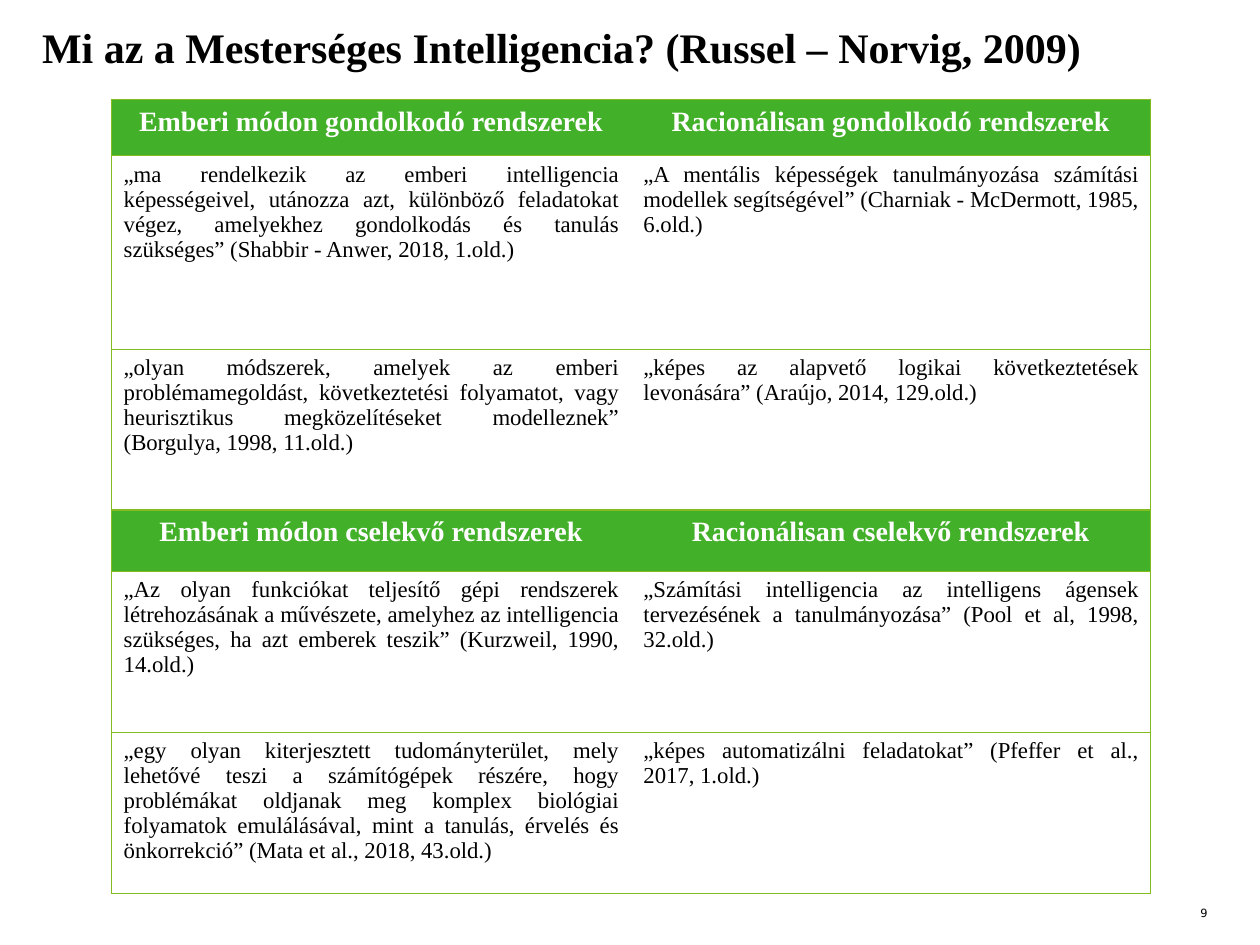
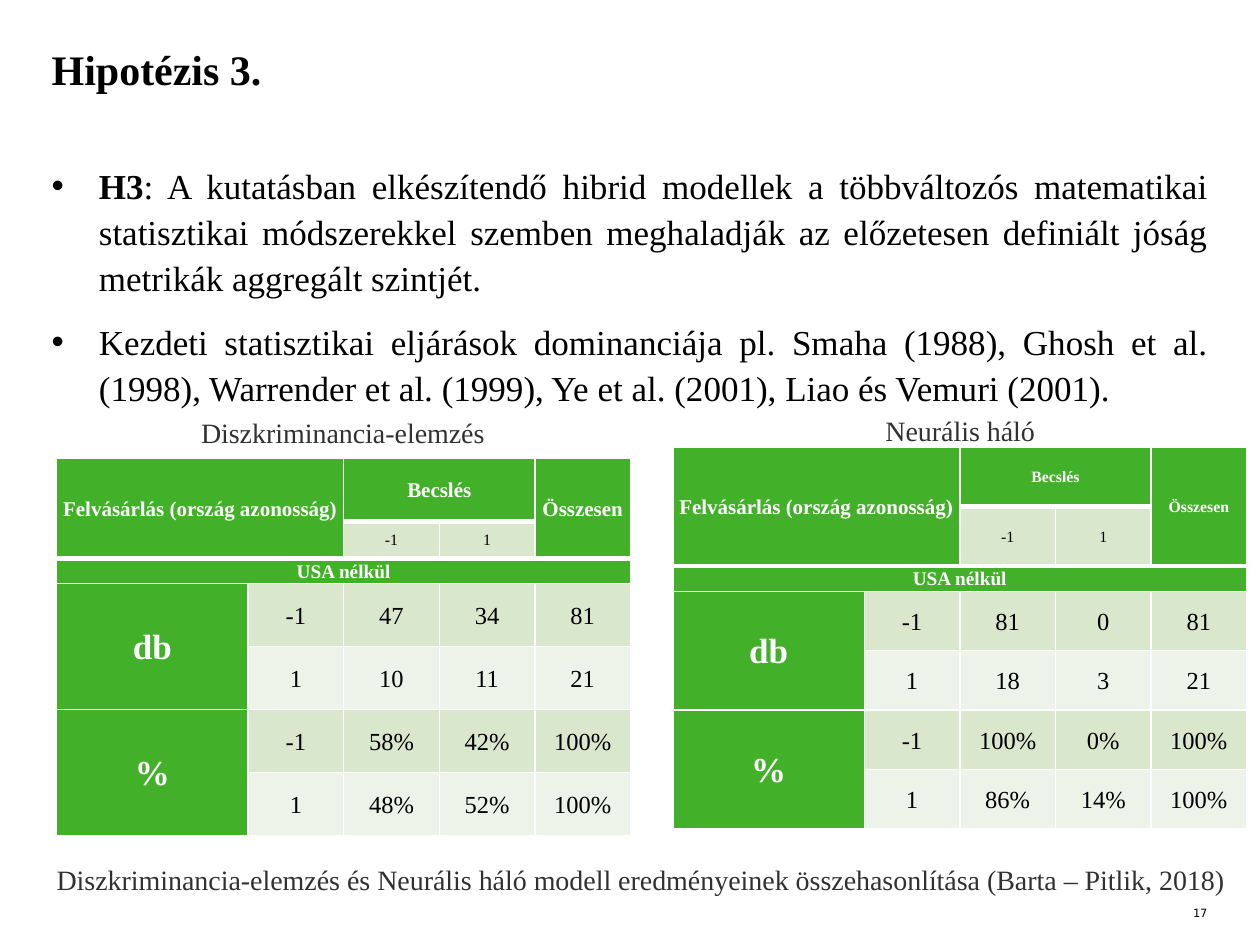
"""Build two slides: definitions of artificial intelligence and the third hypothesis."""
from dataclasses import dataclass

from lxml import etree
from pptx import Presentation
from pptx.dml.color import RGBColor
from pptx.enum.text import MSO_ANCHOR, MSO_AUTO_SIZE, PP_ALIGN
from pptx.oxml.ns import qn
from pptx.util import Pt


@dataclass(frozen=True)
class Theme:
    serif: str = "Times New Roman"
    sans: str = "DejaVu Sans"
    black: str = "000000"
    grey: str = "313131"
    white: str = "FFFFFF"
    green: str = "43B02A"
    rule: str = "84BC20"
    light: str = "D9E7CD"
    pale: str = "EDF3E8"
    title: float = 24
    body: float = 20
    caption: float = 16
    figure: float = 14
    quote: float = 13
    heading: float = 12
    band: float = 11
    small: float = 9
    page: float = 6.5


theme = Theme()


def write(holder, *texts, size, color=theme.black, bold=False, font=theme.serif,
          align=PP_ALIGN.LEFT, anchor=MSO_ANCHOR.TOP, inset=(0, 0),
          line=None, after=None, bullet=None, lead=""):
    """Write one paragraph per text into a text frame or a table cell."""
    holder.margin_left = holder.margin_right = Pt(inset[0])
    holder.margin_top = holder.margin_bottom = Pt(inset[1])
    holder.vertical_anchor = anchor
    frame = getattr(holder, "text_frame", holder)
    frame.word_wrap = True
    frame.auto_size = MSO_AUTO_SIZE.NONE
    for number, text in enumerate(texts):
        paragraph = frame.add_paragraph() if number else frame.paragraphs[0]
        paragraph.alignment = align
        if line:
            paragraph.line_spacing = line
        if after:
            paragraph.space_after = Pt(after)
        if bullet:
            properties = paragraph._p.get_or_add_pPr()
            properties.set("marL", str(Pt(27)))
            properties.set("indent", str(-Pt(27)))
            etree.SubElement(properties, qn("a:buFont")).set("typeface", "Arial")
            etree.SubElement(properties, qn("a:buChar")).set("char", bullet)
        opening = [(lead, True)] if lead and not number else []
        for words, strong in opening + [(text, bold)]:
            run = paragraph.add_run()
            run.text = words
            run.font.name = font
            run.font.size = Pt(size)
            run.font.bold = strong
            run.font.color.rgb = RGBColor.from_string(color)


def edge(cell, widths, color):
    """Draw the left, right, top and bottom borders; a zero width means none."""
    properties = cell._tc.get_or_add_tcPr()
    for index, (side, width) in enumerate(zip("LRTB", widths)):
        border = etree.Element(qn(f"a:ln{side}"), w=str(Pt(width)))
        if width:
            fill = etree.SubElement(border, qn("a:solidFill"))
            etree.SubElement(fill, qn("a:srgbClr"), val=color)
        else:
            etree.SubElement(border, qn("a:noFill"))
        properties.insert(index, border)


deck = Presentation()
deck.slide_width, deck.slide_height = Pt(720), Pt(540)

headings = [
    ("Mi az a Mesterséges Intelligencia? (Russel – Norvig, 2009)", "9", (24, 12.5, 666, 90)),
    ("Hipotézis 3.", "17", (29.5, 25, 661, 55)),
]
slides = []
for heading, page, place in headings:
    slide = deck.slides.add_slide(deck.slide_layouts[5])
    title = slide.shapes.title
    title.left, title.top, title.width, title.height = map(Pt, place)
    write(title.text_frame, heading, size=theme.title, bold=True)
    footer = slide.shapes.add_textbox(Pt(642.5), Pt(517.75), Pt(47.5), Pt(8))
    write(footer.text_frame, page, size=theme.page, font=theme.sans, align=PP_ALIGN.RIGHT)
    slides.append(slide)
definitions_slide, hypothesis_slide = slides

definitions = [
    ("Emberi módon gondolkodó rendszerek", "Racionálisan gondolkodó rendszerek"),
    ("„ma rendelkezik az emberi intelligencia képességeivel, utánozza azt, különböző "
     "feladatokat végez, amelyekhez gondolkodás és tanulás szükséges” "
     "(Shabbir - Anwer, 2018, 1.old.)",
     "„A mentális képességek tanulmányozása számítási modellek segítségével” "
     "(Charniak - McDermott, 1985, 6.old.)"),
    ("„olyan módszerek, amelyek az emberi problémamegoldást, következtetési folyamatot, "
     "vagy heurisztikus megközelítéseket modelleznek” (Borgulya, 1998, 11.old.)",
     "„képes az alapvető logikai következtetések levonására” (Araújo, 2014, 129.old.)"),
    ("Emberi módon cselekvő rendszerek", "Racionálisan cselekvő rendszerek"),
    ("„Az olyan funkciókat teljesítő gépi rendszerek létrehozásának a művészete, amelyhez "
     "az intelligencia szükséges, ha azt emberek teszik” (Kurzweil, 1990, 14.old.)",
     "„Számítási intelligencia az intelligens ágensek tervezésének a tanulmányozása” "
     "(Pool et al, 1998, 32.old.)"),
    ("„egy olyan kiterjesztett tudományterület, mely lehetővé teszi a számítógépek részére, "
     "hogy problémákat oldjanak meg komplex biológiai folyamatok emulálásával, mint a "
     "tanulás, érvelés és önkorrekció” (Mata et al., 2018, 43.old.)",
     "„képes automatizálni feladatokat” (Pfeffer et al., 2017, 1.old.)"),
]
definition_heights = [32, 110.5, 92, 35, 92, 92]
systems = definitions_slide.shapes.add_table(
    len(definitions), 2, Pt(63.5), Pt(57), Pt(594), Pt(sum(definition_heights))).table
for row, (pair, height) in enumerate(zip(definitions, definition_heights)):
    systems.rows[row].height = Pt(height)
    for column, text in enumerate(pair):
        cell = systems.cell(row, column)
        if row in (0, 3):
            cell.fill.solid()
            cell.fill.fore_color.rgb = RGBColor.from_string(theme.green)
            write(cell, text, size=theme.caption, color=theme.white, bold=True,
                  align=PP_ALIGN.CENTER, inset=(7.2, 3.6))
        else:
            cell.fill.background()
            write(cell, text, size=theme.quote, align=PP_ALIGN.JUSTIFY, inset=(7.2, 3.6))
        edge(cell, (0 if column else 0.75, 0.75 if column else 0, 0.75, 0.75), theme.rule)

hypothesis = hypothesis_slide.shapes.add_textbox(Pt(29.5), Pt(91.5), Pt(661), Pt(411))
write(hypothesis.text_frame,
      ": A kutatásban elkészítendő hibrid modellek a többváltozós matematikai statisztikai "
      "módszerekkel szemben meghaladják az előzetesen definiált jóság metrikák aggregált "
      "szintjét.",
      "Kezdeti statisztikai eljárások dominanciája pl. Smaha (1988), Ghosh et al. (1998), "
      "Warrender et al. (1999), Ye et al. (2001), Liao és Vemuri (2001).",
      size=theme.body, align=PP_ALIGN.JUSTIFY, line=1.1, after=10, bullet="•", lead="H3")

merges = [(0, 0, 1, 1), (0, 2, 0, 3), (0, 4, 1, 4), (2, 0, 2, 4), (3, 0, 4, 0), (5, 0, 6, 0)]
results = [
    ((32.4, 262), [36, 21, 14.4, 36, 36, 36, 36], theme.heading,
     [("47", "34", "81"), ("10", "11", "21"), ("58%", "42%", "100%"), ("48%", "52%", "100%")]),
    ((384.5, 255.5), [34, 34, 14.4, 34, 34, 34, 34], theme.small,
     [("81", "0", "81"), ("18", "3", "21"), ("100%", "0%", "100%"), ("86%", "14%", "100%")]),
]
for (left, top), heights, estimate_size, figures in results:
    grid = [
        ("Felvásárlás (ország azonosság)", "", "Becslés", "", "Összesen"),
        ("", "", "-1", "1", ""),
        ("USA nélkül", "", "", "", ""),
    ]
    for stub, group, values in zip(("db", "", "%", ""), ("-1", "1") * 2, figures):
        grid.append((stub, group, *values))
    matrix = hypothesis_slide.shapes.add_table(
        7, 5, Pt(left), Pt(top), Pt(328), Pt(sum(heights))).table
    for column in range(5):
        matrix.columns[column].width = Pt(54.65 if column else 109.4)
    for first_row, first_column, last_row, last_column in merges:
        matrix.cell(first_row, first_column).merge(matrix.cell(last_row, last_column))
    for row, texts in enumerate(grid):
        matrix.rows[row].height = Pt(heights[row])
        for column, text in enumerate(texts):
            cell = matrix.cell(row, column)
            header = row in (0, 2) or column == 0 or cell.is_spanned
            if row == 0:
                size = estimate_size if column else theme.heading
            elif row == 1:
                size = theme.small
            elif row == 2:
                size = theme.band
            else:
                size = theme.figure if column else theme.body
            shade = theme.green if header else theme.pale if row in (4, 6) else theme.light
            cell.fill.solid()
            cell.fill.fore_color.rgb = RGBColor.from_string(shade)
            edge(cell, (1, 1, 3 if row in (1, 2) else 1, 3 if row in (0, 1) else 1), theme.white)
            if not cell.is_spanned:
                write(cell, text, size=size, color=theme.white if header else theme.black,
                      bold=header, align=PP_ALIGN.CENTER, anchor=MSO_ANCHOR.MIDDLE,
                      inset=(3.6, 0), line=1.07)

captions = [
    ("Diszkriminancia-elemzés és Neurális háló modell eredményeinek összehasonlítása "
     "(Barta – Pitlik, 2018)", 19.5, 492.75, 693.5),
    ("Diszkriminancia-elemzés", 55, 237.5, 282),
    ("Neurális háló", 407.75, 236.25, 282),
]
for text, left, top, width in captions:
    caption = hypothesis_slide.shapes.add_textbox(Pt(left), Pt(top), Pt(width), Pt(19.5))
    write(caption.text_frame, text, size=theme.caption, color=theme.grey, align=PP_ALIGN.CENTER)

deck.save("out.pptx")
